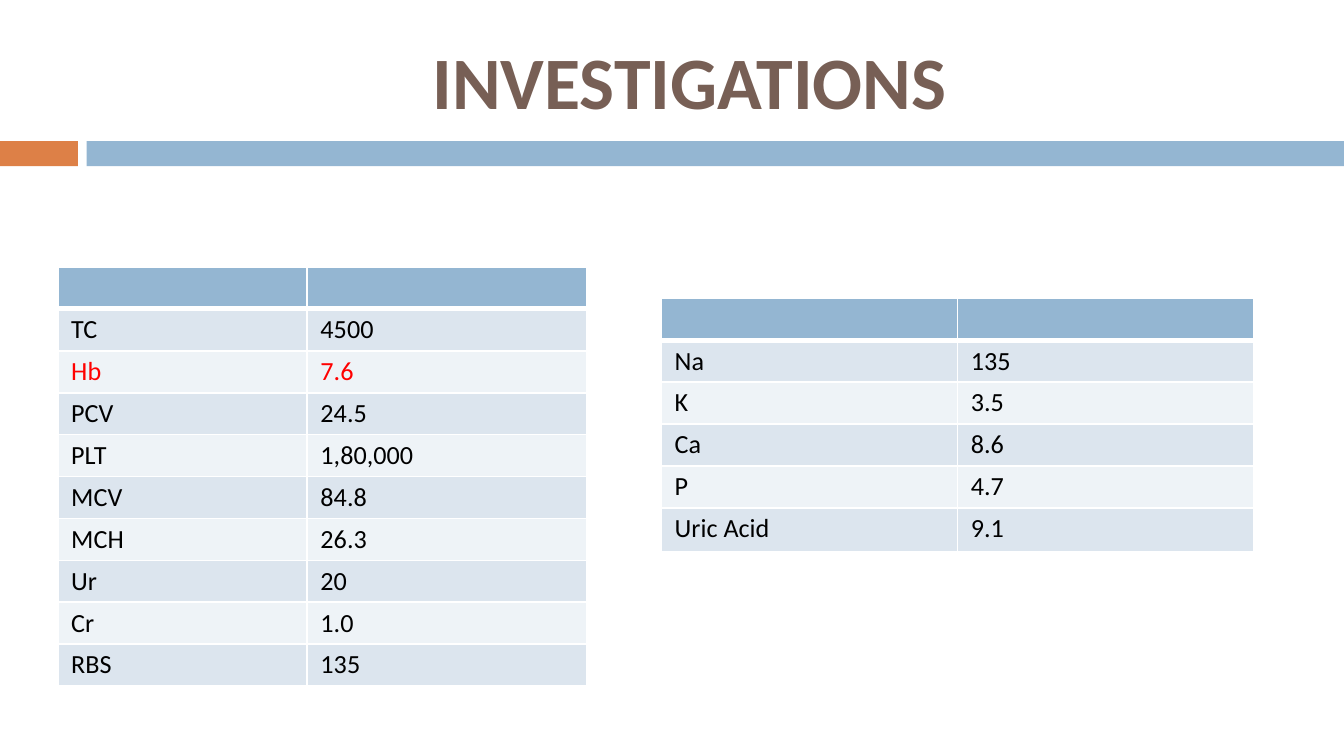
from lxml.etree import SubElement
from pptx import Presentation
from pptx.dml.color import RGBColor
from pptx.enum.shapes import MSO_SHAPE
from pptx.enum.text import MSO_ANCHOR, PP_ALIGN
from pptx.oxml.ns import qn
from pptx.util import Inches, Pt

UNIT = 0.1  # grid step in inches: 100 columns by 56.25 rows (16:9)
COLUMNS, ROWS = 100, 56.25
ROW = 3.12  # table row height in grid rows

BLOOD = [("TC", "4500"), ("Hb", "7.6"), ("PCV", "24.5"), ("PLT", "1,80,000"),
         ("MCV", "84.8"), ("MCH", "26.3"), ("Ur", "20"), ("Cr", "1.0"), ("RBS", "135")]
ELECTROLYTES = [("Na", "135"), ("K", "3.5"), ("Ca", "8.6"), ("P", "4.7"), ("Uric Acid", "9.1")]


def grid(n):
    return Inches(n * UNIT)


def color(value):
    return RGBColor.from_string(value)


def write(tf, text, font="Calibri", size=14, fill="000000", bold=False, align=PP_ALIGN.LEFT):
    p = tf.paragraphs[0]
    p.alignment = align
    if not text:  # an empty cell keeps the height of its text size
        SubElement(p._p, qn("a:endParaRPr"), sz=str(size * 100))
        return
    r = p.add_run()
    r.text = text
    r.font.name, r.font.size, r.font.bold = font, Pt(size), bold
    r.font.color.rgb = color(fill)


def border(cell, **widths):
    tc_pr = cell._tc.get_or_add_tcPr()
    for side in "LRTB":
        ln = SubElement(tc_pr, qn("a:ln" + side), w=str(Pt(widths.get(side, 1))))
        fill = SubElement(ln, qn("a:solidFill"))
        SubElement(fill, qn("a:srgbClr"), val="FFFFFF")


class Deck:
    accent, header, title_color, alert = "DD8047", "94B6D2", "775F55", "FF0000"
    bands = ("DCE5EE", "EEF3F7")

    def __init__(self):
        self.prs = Presentation()
        self.prs.slide_width, self.prs.slide_height = grid(COLUMNS), grid(ROWS)
        self.slide = self.prs.slides.add_slide(self.prs.slide_layouts[6])

    def bar(self, x, y, w, h, fill):
        sp = self.slide.shapes.add_shape(MSO_SHAPE.RECTANGLE, *map(grid, (x, y, w, h)))
        sp.shadow.inherit = False
        sp.fill.solid()
        sp.fill.fore_color.rgb = color(fill)
        sp.line.fill.background()

    def title(self, x, y, w, h, text):
        tf = self.slide.shapes.add_textbox(*map(grid, (x, y, w, h))).text_frame
        tf.word_wrap = True
        tf.vertical_anchor = MSO_ANCHOR.MIDDLE
        write(tf, text, size=39.6, fill=self.title_color, bold=True, align=PP_ALIGN.CENTER)

    def table(self, x, y, widths, results, last_row=ROW, alerts=()):
        rows = [("", "")] + results
        heights = [ROW] * len(results) + [last_row]
        frame = self.slide.shapes.add_table(len(rows), len(widths), grid(x), grid(y),
                                            grid(sum(widths)), grid(sum(heights)))
        table = frame.table
        for column, width in zip(table.columns, widths):
            column.width = grid(width)
        for i, (values, height) in enumerate(zip(rows, heights)):
            table.rows[i].height = grid(height)
            for j, text in enumerate(values):
                cell = table.cell(i, j)
                cell.margin_left = cell.margin_right = grid(1)
                cell.margin_top = cell.margin_bottom = grid(0.37)
                # Thick rule between header and body
                border(cell, B=3 if i == 0 else 1, T=3 if i == 1 else 1)
                cell.fill.solid()
                cell.fill.fore_color.rgb = color(self.bands[(i - 1) % 2] if i else self.header)
                write(cell.text_frame, text,
                      fill=self.alert if values[0] in alerts else "000000")


def main():
    deck = Deck()

    # Heading and divider
    deck.bar(0, 10.5, 5.8, 1.87, deck.accent)
    deck.bar(6.45, 10.5, COLUMNS - 6.45, 1.87, deck.header)
    deck.title(6.7, 1.9, 89.2, 8.1, "INVESTIGATIONS")

    # Test results, abnormal haemoglobin in red
    deck.table(4.3, 19.87, (18.55, 20.8), BLOOD, alerts=("Hb",))
    deck.table(49.2, 22.2, (22.04, 22.04), ELECTROLYTES, last_row=3.3)

    deck.prs.save("out.pptx")


if __name__ == "__main__":
    main()
